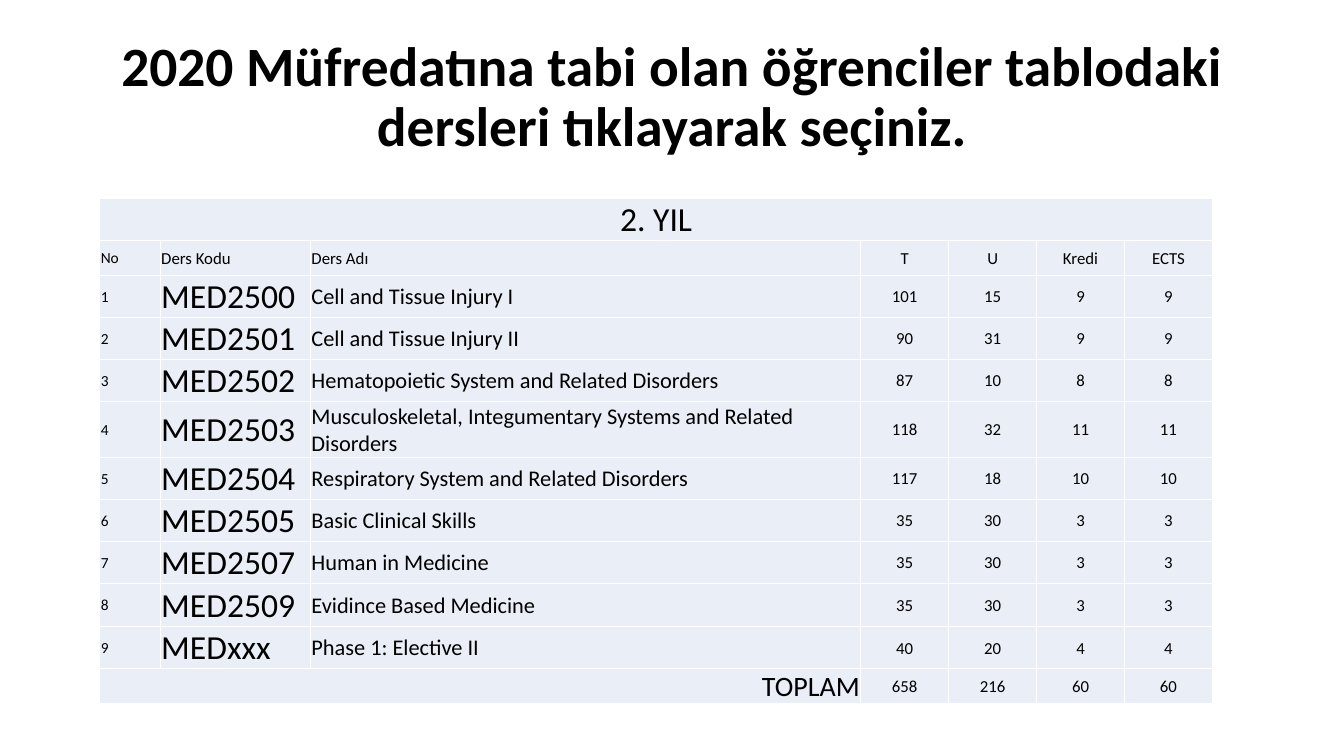
"""Build the second-year course table slide."""
from dataclasses import dataclass

from lxml.etree import SubElement
from pptx import Presentation
from pptx.dml.color import RGBColor as Rgb
from pptx.enum.text import MSO_ANCHOR as Anchor, MSO_AUTO_SIZE as AutoSize, PP_ALIGN as Align
from pptx.oxml.ns import qn
from pptx.util import Pt


@dataclass(frozen=True)
class Theme:
    font: str = "Calibri"
    ink: str = "000000"
    cell: str = "EAEFF7"
    rule: str = "FFFFFF"
    title: float = 39.6
    year: float = 24
    total: float = 20
    number: float = 11
    code: float = 24
    course: float = 16
    figure: float = 12


class CourseSlide:
    def __init__(self, deck, theme):
        self.theme = theme
        self.slide = deck.slides.add_slide(deck.slide_layouts[5])

    def set_text(self, paragraph, text, size, align, bold=False):
        paragraph.text = text
        paragraph.alignment = align
        for run in paragraph.runs:
            run.font.name = self.theme.font
            run.font.size = Pt(size)
            run.font.bold = bold
            run.font.color.rgb = Rgb.from_string(self.theme.ink)

    def title(self, text, left, top, width, height):
        heading = self.slide.shapes.title
        heading.left, heading.top = Pt(left), Pt(top)
        heading.width, heading.height = Pt(width), Pt(height)
        frame = heading.text_frame
        frame.word_wrap = True
        frame.auto_size = AutoSize.NONE
        frame.vertical_anchor = Anchor.MIDDLE
        self.set_text(frame.paragraphs[0], text, self.theme.title, Align.CENTER, True)
        frame.paragraphs[0].line_spacing = 0.9

    def table(self, left, top, height, widths, heights):
        frame = self.slide.shapes.add_table(
            len(heights), len(widths), Pt(left), Pt(top), Pt(sum(widths)), Pt(height))
        courses = frame.table
        courses.first_row = courses.horz_banding = False
        for column, width in zip(courses.columns, widths):
            column.width = Pt(width)
        for row, row_height in zip(courses.rows, heights):
            row.height = Pt(row_height)
        frame.height = Pt(height)
        for cell in courses.iter_cells():
            self.style_cell(cell)
        return courses

    def style_cell(self, cell):
        cell.fill.solid()
        cell.fill.fore_color.rgb = Rgb.from_string(self.theme.cell)
        cell.vertical_anchor = Anchor.MIDDLE
        cell.margin_left = cell.margin_right = cell.margin_top = Pt(0.7)
        cell.margin_bottom = 0
        properties = cell._tc.get_or_add_tcPr()
        for position, side in enumerate(("a:lnL", "a:lnR", "a:lnT", "a:lnB")):
            border = SubElement(properties, qn(side), w=str(Pt(1)))
            SubElement(SubElement(border, qn("a:solidFill")), qn("a:srgbClr"), val=self.theme.rule)
            properties.insert(position, border)

    def cell(self, cell, text, size, align):
        self.set_text(cell.text_frame.paragraphs[0], text, size, align)

    def row(self, courses, index, texts, sizes, start=0):
        for column, (text, size) in enumerate(zip(texts, sizes), start):
            align = Align.LEFT if column < 3 else Align.CENTER
            self.cell(courses.cell(index, column), str(text), size, align)


HEADINGS = ("No", "Ders Kodu", "Ders Adı", "T", "U", "Kredi", "ECTS")
COURSES = (
    ("MED2500", "Cell and Tissue Injury I", 101, 15, 9, 9),
    ("MED2501", "Cell and Tissue Injury II", 90, 31, 9, 9),
    ("MED2502", "Hematopoietic System and Related Disorders", 87, 10, 8, 8),
    ("MED2503", "Musculoskeletal, Integumentary Systems and Related Disorders", 118, 32, 11, 11),
    ("MED2504", "Respiratory System and Related Disorders", 117, 18, 10, 10),
    ("MED2505", "Basic Clinical Skills", 35, 30, 3, 3),
    ("MED2507", "Human in Medicine", 35, 30, 3, 3),
    ("MED2509", "Evidince Based Medicine", 35, 30, 3, 3),
    ("MEDxxx", "Phase 1: Elective II", 40, 20, 4, 4),
)
TOTALS = (658, 216, 60, 60)


def main():
    deck = Presentation()
    deck.slide_width, deck.slide_height = Pt(960), Pt(540)
    theme = Theme()
    page = CourseSlide(deck, theme)
    page.title("2020 Müfredatına tabi olan öğrenciler tablodaki dersleri tıklayarak seçiniz.",
               66, 28.8, 828, 83)

    widths = [43.2, 107.3, 393.1] + [62.8] * 4
    heights = [31 if index in (5, 9) else 25.2 for index in range(len(COURSES) + 3)]
    courses = page.table(71.3, 141.8, 356.4, widths, heights)

    courses.cell(0, 0).merge(courses.cell(0, 6))
    page.cell(courses.cell(0, 0), "2. YIL", theme.year, Align.CENTER)

    figures = [theme.figure] * 4
    page.row(courses, 1, HEADINGS, [theme.number, theme.figure, theme.figure] + figures)
    for number, course in enumerate(COURSES, 1):
        page.row(courses, number + 1, (number, *course),
                 [theme.number, theme.code, theme.course] + figures)

    last = len(COURSES) + 2
    courses.cell(last, 0).merge(courses.cell(last, 2))
    page.cell(courses.cell(last, 0), "TOPLAM", theme.total, Align.RIGHT)
    page.row(courses, last, TOTALS, figures, start=3)

    deck.save("out.pptx")


if __name__ == "__main__":
    main()
